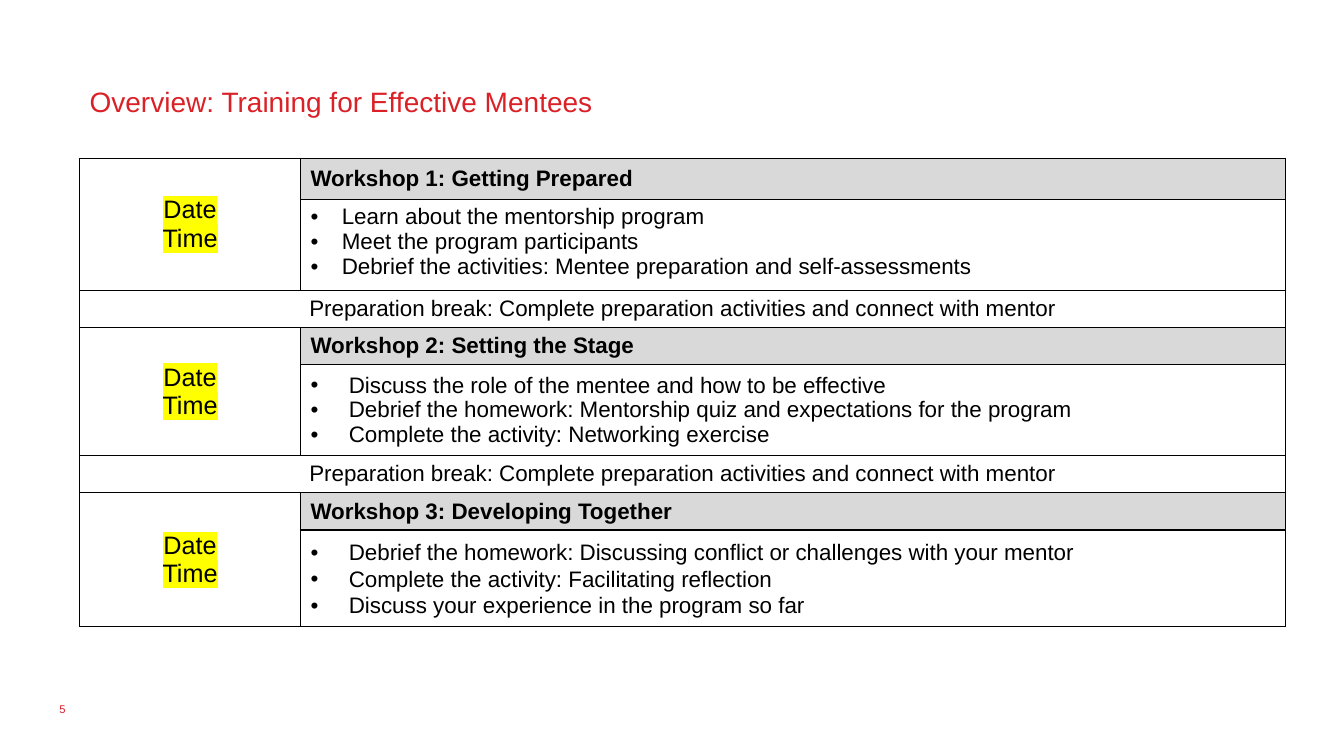
from lxml import etree
from pptx import Presentation
from pptx.dml.color import RGBColor
from pptx.enum.text import MSO_ANCHOR, PP_ALIGN
from pptx.oxml.ns import qn
from pptx.util import Inches, Pt

TOP, MIDDLE = MSO_ANCHOR.TOP, MSO_ANCHOR.MIDDLE
LEFT, CENTER = PP_ALIGN.LEFT, PP_ALIGN.CENTER
RED, BLACK, GREY, YELLOW = "DA2127", "000000", "D9D9D9", "FFFF00"
FONT = "Arial"

BREAK = "Preparation break: Complete preparation activities and connect with mentor"
SHOPS = [
    ("Workshop 1: Getting Prepared",
     ["Learn about the mentorship program",
      "Meet the program participants",
      "Debrief the activities: Mentee preparation and self-assessments"],
     dict(indent=0.31), TOP),
    ("Workshop 2: Setting the Stage",
     ["Discuss the role of the mentee and how to be effective",
      "Debrief the homework: Mentorship quiz and expectations for the program",
      "Complete the activity: Networking exercise"],
     dict(indent=0.38), MIDDLE),
    ("Workshop 3: Developing Together",
     ["Debrief the homework: Discussing conflict or challenges with your mentor",
      "Complete the activity: Facilitating reflection",
      "Discuss your experience in the program so far"],
     dict(indent=0.38, spacing=1.07), MIDDLE),
]
COLS = [2.19, 9.77]
ROWS = [0.41, 0.9, 0.37, 0.37, 0.9, 0.37, 0.37, 0.96]


def color(code):
    return RGBColor.from_string(code)


def paint(parent, tag, code):
    node = etree.SubElement(parent, qn(tag))
    etree.SubElement(node, qn("a:srgbClr"), val=code)
    return node


def write(frame, lines, size=16, ink=BLACK, bold=False, align=LEFT,
          mark=None, indent=0, spacing=None):
    for index, line in enumerate(lines):
        para = frame.paragraphs[0] if index == 0 else frame.add_paragraph()
        para.alignment = align
        if indent:
            props = para._p.get_or_add_pPr()
            props.set("marL", str(Inches(indent)))
            props.set("indent", str(-Inches(indent)))
            etree.SubElement(props, qn("a:buFont"), typeface=FONT)
            etree.SubElement(props, qn("a:buChar"), char="•")
        if spacing:
            para.line_spacing = spacing
        run = para.add_run()
        run.text = line
        run.font.size = Pt(size)
        run.font.bold = bold
        run.font.color.rgb = color(ink)
        if mark:
            paint(run._r.get_or_add_rPr(), "a:highlight", mark)
        run.font.name = FONT


class Deck:
    def __init__(self, font_ink):
        self.ink = font_ink
        self.prs = Presentation()
        self.prs.slide_width = Inches(13.33)
        self.prs.slide_height = Inches(7.5)
        self.slide = self.prs.slides.add_slide(self.prs.slide_layouts[6])

    def text(self, line, box, size, anchor=TOP):
        frame = self.slide.shapes.add_textbox(*map(Inches, box)).text_frame
        frame.word_wrap = True
        frame.vertical_anchor = anchor
        write(frame, [line], size=size, ink=self.ink)

    def table(self, left, top, cols, rows):
        shape = self.slide.shapes.add_table(
            len(rows), len(cols), Inches(left), Inches(top),
            Inches(sum(cols)), Inches(sum(rows)))
        grid = shape.table
        grid.first_row = grid.horz_banding = False
        for col, width in zip(grid.columns, cols):
            col.width = Inches(width)
        for row, height in zip(grid.rows, rows):
            row.height = Inches(height)
        for cell in grid.iter_cells():
            self.border(cell)
            cell.fill.background()
        return grid

    def border(self, cell):
        props = cell._tc.get_or_add_tcPr()
        for side in ("a:lnL", "a:lnR", "a:lnT", "a:lnB"):
            line = etree.SubElement(props, qn(side), w=str(Pt(1)))
            paint(line, "a:solidFill", BLACK)

    def cell(self, cell, lines, anchor=MIDDLE, fill=None, **style):
        cell.vertical_anchor = anchor
        if fill:
            cell.fill.solid()
            cell.fill.fore_color.rgb = color(fill)
        write(cell.text_frame, lines, **style)

    def save(self):
        self.prs.save("out.pptx")


def main():
    deck = Deck(RED)
    deck.text("Overview: Training for Effective Mentees",
              (0.79, 0.79, 10.75, 0.44), 20)
    grid = deck.table(0.79, 1.57, COLS, ROWS)
    for index, (title, tasks, style, anchor) in enumerate(SHOPS):
        row = index * 3
        if index:
            pause = grid.cell(row - 1, 0)
            pause.merge(grid.cell(row - 1, 1))
            deck.cell(pause, [BREAK], align=CENTER)
        date = grid.cell(row, 0)
        date.merge(grid.cell(row + 1, 0))
        deck.cell(date, ["Date", "Time"], size=18, align=CENTER, mark=YELLOW)
        deck.cell(grid.cell(row, 1), [title], fill=GREY, bold=True)
        deck.cell(grid.cell(row + 1, 1), tasks, anchor=anchor, **style)
    deck.text("5", (0.49, 6.83, 3, 0.4), 8, MIDDLE)
    deck.save()


if __name__ == "__main__":
    main()
